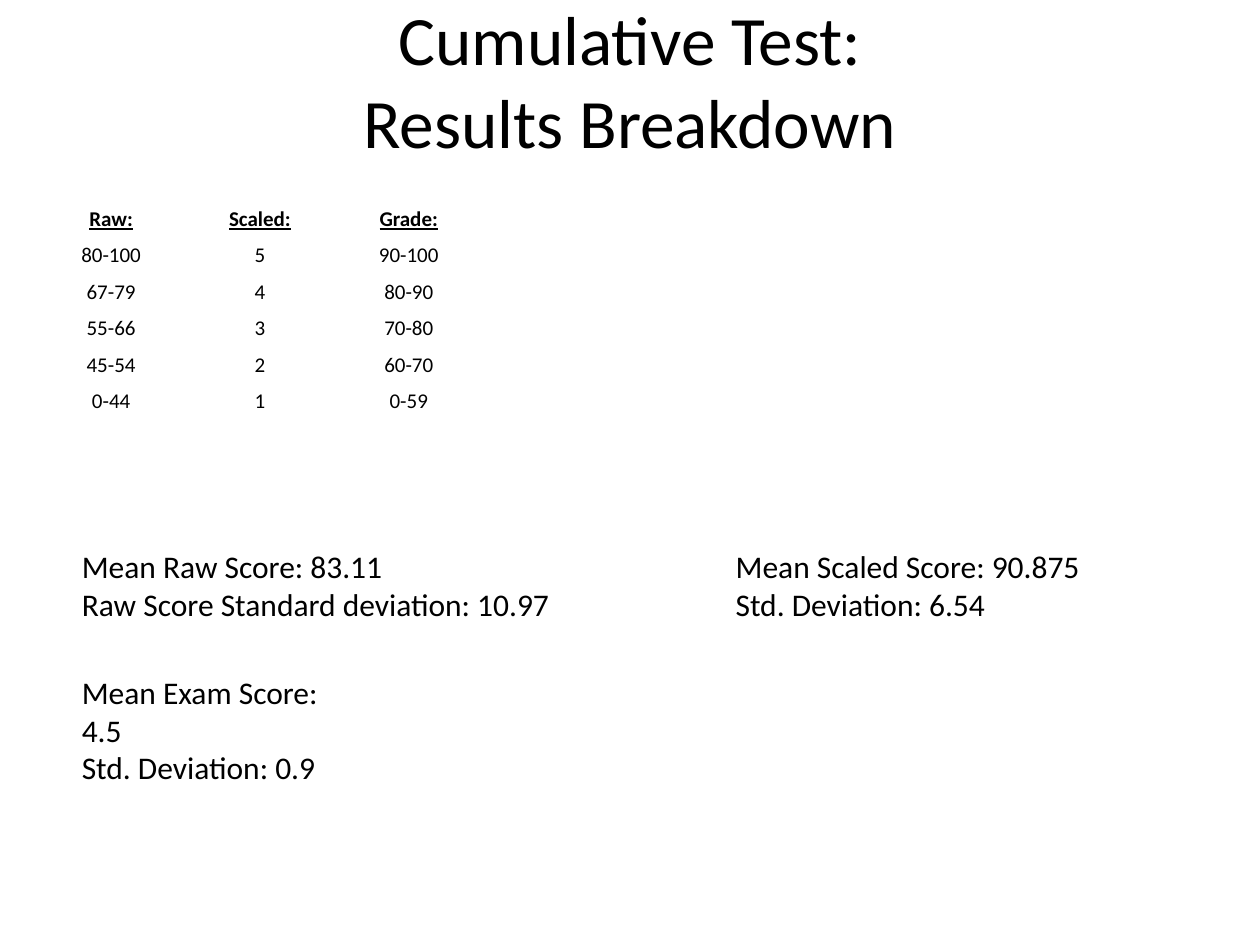
from dataclasses import dataclass

from pptx import Presentation
from pptx.dml.color import RGBColor
from pptx.enum.text import MSO_ANCHOR as Anchor, MSO_AUTO_SIZE as AutoSize, PP_ALIGN as Align
from pptx.util import Cm, Pt

COLORS = {"text": "000000", "background": "FFFFFF"}
FONT = "Calibri"
TITLE = ("Cumulative Test:", "Results Breakdown")
SCALE = [
    ("Raw:", "Scaled:", "Grade:"),
    ("80-100", "5", "90-100"),
    ("67-79", "4", "80-90"),
    ("55-66", "3", "70-80"),
    ("45-54", "2", "60-70"),
    ("0-44", "1", "0-59"),
]
COL_W, TABLE_H = 3.0, 4.42


@dataclass
class Stat:
    left: float
    top: float
    width: float
    lines: tuple[str, str]


STATS = [
    Stat(1.4, 10.9, 10.08, ("Mean Raw Score: 83.11", "Raw Score Standard deviation: 10.97")),
    Stat(14.58, 10.9, 7.54, ("Mean Scaled Score: 90.875", "Std. Deviation: 6.54")),
    Stat(1.4, 13.44, 5.59, ("Mean Exam Score: 4.5", "Std. Deviation: 0.9")),
]


def add_run(p, text: str, size: float, heading: bool = False) -> None:
    r = p.add_run()
    r.text = text
    r.font.name = FONT
    r.font.size = Pt(size)
    r.font.bold = heading
    r.font.underline = heading
    r.font.color.rgb = RGBColor.from_string(COLORS["text"])


def set_title(slide) -> None:
    sp = slide.shapes.title
    sp.left, sp.top, sp.width, sp.height = Cm(1.27), Cm(0), Cm(22.86), Cm(3.18)
    tf = sp.text_frame
    tf.auto_size = AutoSize.NONE
    tf.vertical_anchor = Anchor.MIDDLE
    p = tf.paragraphs[0]
    p.alignment = Align.CENTER
    first, second = TITLE
    add_run(p, first, 39.6)
    p.add_line_break()
    add_run(p, second, 39.6)


def add_scale_table(slide) -> None:
    rows, cols = len(SCALE), len(SCALE[0])
    table = slide.shapes.add_table(
        rows, cols, Cm(0.74), Cm(3.94), Cm(COL_W * cols), Cm(TABLE_H)
    ).table
    table.first_row = True
    table.horz_banding = False
    for i, values in enumerate(SCALE):
        for j, value in enumerate(values):
            cell = table.cell(i, j)
            cell.fill.background()
            cell.vertical_anchor = Anchor.BOTTOM
            cell.margin_left = cell.margin_right = cell.margin_top = Cm(0.03)
            cell.margin_bottom = Cm(0)
            p = cell.text_frame.paragraphs[0]
            p.alignment = Align.CENTER
            add_run(p, value, 12, heading=i == 0)


def add_stat(slide, stat: Stat) -> None:
    sp = slide.shapes.add_textbox(Cm(stat.left), Cm(stat.top), Cm(stat.width), Cm(1.8))
    tf = sp.text_frame
    tf.word_wrap = False
    tf.auto_size = AutoSize.SHAPE_TO_FIT_TEXT
    for i, line in enumerate(stat.lines):
        p = tf.add_paragraph() if i else tf.paragraphs[0]
        p.alignment = Align.LEFT
        add_run(p, line, 18)


def main() -> None:
    prs = Presentation()
    prs.slide_width, prs.slide_height = Cm(25.4), Cm(19.05)
    slide = prs.slides.add_slide(prs.slide_layouts[5])
    fill = slide.background.fill
    fill.solid()
    fill.fore_color.rgb = RGBColor.from_string(COLORS["background"])
    set_title(slide)
    add_scale_table(slide)
    for stat in STATS:
        add_stat(slide, stat)
    prs.save("out.pptx")


if __name__ == "__main__":
    main()
